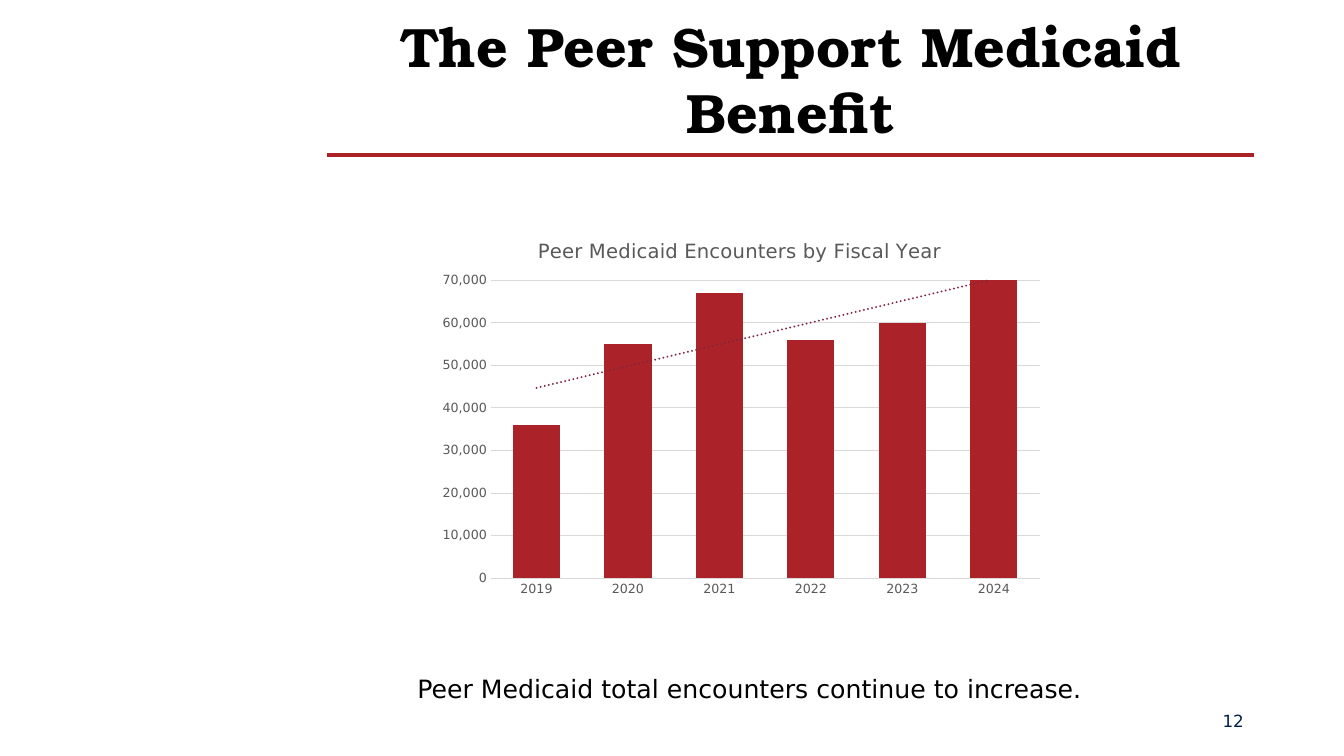
import pptx
import pptx.chart.data
import pptx.dml.color
import pptx.enum.chart
import pptx.enum.dml
import pptx.enum.shapes
import pptx.enum.text
import pptx.oxml
import pptx.oxml.ns
import pptx.util

Pt = pptx.util.Pt
ALIGN = pptx.enum.text.PP_ALIGN
ANCHOR = pptx.enum.text.MSO_ANCHOR
TICK = pptx.enum.chart.XL_TICK_MARK

SANS = "DejaVu Sans"
SERIF = "TeX Gyre Bonum"
RED = "AB2328"
GREY = "595959"
PALE = "D9D9D9"
ENCOUNTERS = {
    "2019": 36000, "2020": 55000, "2021": 67000,
    "2022": 56000, "2023": 60000, "2024": 71000,
}


def rgb(hex_colour):
    return pptx.dml.color.RGBColor.from_string(hex_colour)


def style_font(font, size, colour, face=SANS, bold=False):
    font.size = Pt(size)
    font.name = face
    font.bold = bold
    font.color.rgb = rgb(colour)


def style_line(line, colour, width):
    line.color.rgb = rgb(colour)
    line.width = Pt(width)


def add_text(slide, box, text, size, colour, face=SANS, bold=False,
             align=ALIGN.LEFT, anchor=ANCHOR.TOP, insets=(7.2, 3.6)):
    frame = slide.shapes.add_textbox(*map(Pt, box)).text_frame
    frame.word_wrap = True
    frame.vertical_anchor = anchor
    frame.margin_left = frame.margin_right = Pt(insets[0])
    frame.margin_top = frame.margin_bottom = Pt(insets[1])
    paragraph = frame.paragraphs[0]
    paragraph.alignment = align
    run = paragraph.add_run()
    run.text = text
    style_font(run.font, size, colour, face, bold)
    return paragraph


def add_rule(slide, left, right, y):
    rule = slide.shapes.add_connector(
        pptx.enum.shapes.MSO_CONNECTOR.STRAIGHT, Pt(left), Pt(y), Pt(right), Pt(y))
    style_line(rule.line, RED, 3)
    rule._element.spPr.append(pptx.oxml.parse_xml(
        f'<a:effectLst {pptx.oxml.ns.nsdecls("a")}/>'))


def layout_xml(**settings):
    parts = "".join(f'<c:{tag} val="{value}"/>' for tag, value in settings.items())
    return pptx.oxml.parse_xml(
        f'<c:layout {pptx.oxml.ns.nsdecls("c")}>'
        f'<c:manualLayout>{parts}</c:manualLayout></c:layout>')


def set_layout(parent, layout, index):
    for old in parent.findall(pptx.oxml.ns.qn("c:layout")):
        parent.remove(old)
    parent.insert(index, layout)


def add_trend(series):
    trend = pptx.oxml.parse_xml(
        f'<c:trendline {pptx.oxml.ns.nsdecls("c", "a")}>'
        '<c:spPr><a:ln w="19050" cap="rnd">'
        '<a:solidFill><a:srgbClr val="7F233F"/></a:solidFill>'
        '<a:prstDash val="sysDot"/></a:ln></c:spPr>'
        '<c:trendlineType val="linear"/>'
        '<c:dispRSqr val="0"/><c:dispEq val="0"/></c:trendline>')
    series._element.find(pptx.oxml.ns.qn("c:cat")).addprevious(trend)


def add_encounter_chart(slide, box):
    encounters = pptx.chart.data.CategoryChartData(number_format="#,##0")
    encounters.categories = list(ENCOUNTERS)
    encounters.add_series("Series 1", list(ENCOUNTERS.values()))
    chart = slide.shapes.add_chart(
        pptx.enum.chart.XL_CHART_TYPE.COLUMN_CLUSTERED, *map(Pt, box), encounters).chart
    style_font(chart.font, 10, "000000")
    chart.has_legend = False

    # Chart title
    chart.has_title = True
    heading = chart.chart_title.text_frame.paragraphs[0].add_run()
    heading.text = "Peer Medicaid Encounters by Fiscal Year"
    style_font(heading.font, 14, GREY)
    chart.chart_title.include_in_layout = False
    set_layout(chart.chart_title._element,
               layout_xml(xMode="edge", yMode="edge", x=0.17, y=0.04), 1)

    # Columns and trend
    plot = chart.plots[0]
    plot.vary_by_categories = False
    plot.gap_width = 94
    plot.overlap = -27
    columns = plot.series[0]
    columns.format.fill.solid()
    columns.format.fill.fore_color.rgb = rgb(RED)
    add_trend(columns)

    # Axes
    years, counts = chart.category_axis, chart.value_axis
    for axis in (years, counts):
        axis.major_tick_mark = axis.minor_tick_mark = TICK.NONE
        style_font(axis.tick_labels.font, 9, GREY)
    style_line(years.format.line, PALE, 0.75)
    counts.format.line.fill.background()
    counts.minimum_scale = 0
    counts.maximum_scale = 70000
    counts.major_unit = 10000
    counts.has_major_gridlines = True
    style_line(counts.major_gridlines.format.line, PALE, 0.75)
    counts.tick_labels.number_format = "#,##0"
    counts.tick_labels.number_format_is_linked = False

    # Plot area inside the axes
    set_layout(chart._chartSpace.chart.plotArea,
               layout_xml(layoutTarget="inner", xMode="edge", yMode="edge",
                          x=0.1, y=0.16, w=0.88, h=0.77), 0)


def main():
    deck = pptx.Presentation()
    deck.slide_width, deck.slide_height = Pt(960), Pt(540)
    slide = deck.slides.add_slide(deck.slide_layouts[6])

    # Heading
    add_rule(slide, 233.5, 896, 111)
    add_text(slide, (210.5, 0, 708.5, 106.5), "The Peer Support Medicaid Benefit",
             39.6, "000000", SERIF, True, ALIGN.CENTER, ANCHOR.BOTTOM, (5, 3))

    # Takeaway
    takeaway = add_text(slide, (291, 474.5, 504, 29.5),
                        "Peer Medicaid total encounters continue to increase.", 18, "000000")
    takeaway.line_spacing = 1.15
    takeaway.space_after = Pt(8)

    # Page number
    add_text(slide, (732, 500.5, 161.5, 29), "12", 12, "022151",
             align=ALIGN.RIGHT, anchor=ANCHOR.MIDDLE, insets=(5, 3))

    add_encounter_chart(slide, (306, 156, 445.5, 276.5))
    deck.save("out.pptx")


if __name__ == "__main__":
    main()
